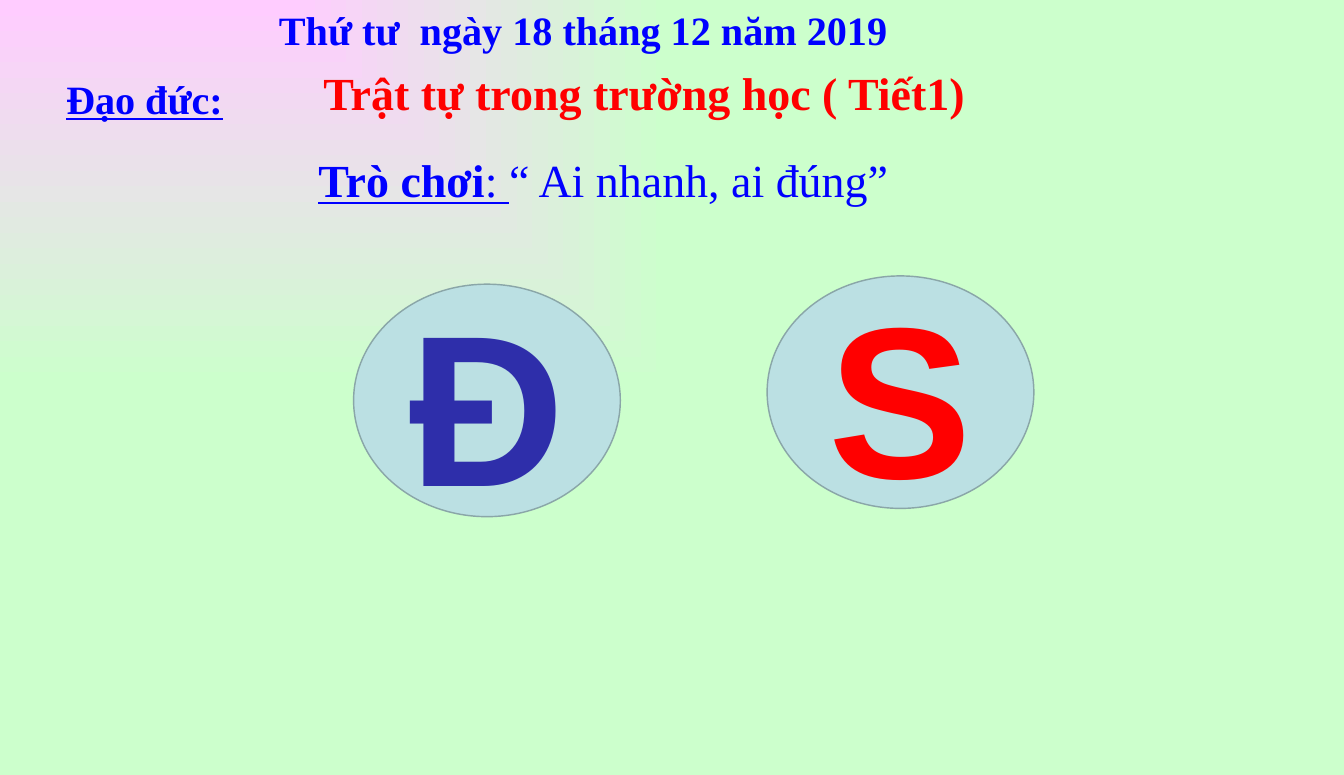
"""Build the "Trật tự trong trường học" true-or-false game slide."""
from dataclasses import dataclass

from lxml.etree import SubElement
from pptx import Presentation
from pptx.dml.color import RGBColor as RGB
from pptx.enum.shapes import MSO_SHAPE as SHAPE
from pptx.enum.text import MSO_ANCHOR as ANCHOR, MSO_AUTO_SIZE as AUTO, PP_ALIGN as ALIGN
from pptx.oxml.ns import qn
from pptx.slide import Slide
from pptx.text.text import _Run as Run
from pptx.util import Pt


@dataclass(frozen=True)
class Theme:
    serif: str = "Times New Roman"
    sans: str = "Arial"
    small: int = 28
    large: int = 32
    letter: int = 150
    blue: str = "0000FF"
    red: str = "FF0000"
    navy: str = "2E2EAA"
    disc: str = "BBE0E3"
    outline: str = "8AA6A8"
    pink: str = "FFCCFF"
    green: str = "CCFFCC"


@dataclass(frozen=True)
class Span:
    text: str
    bold: bool = True
    underline: bool = False


@dataclass(frozen=True)
class Line:
    left: float
    top: float
    width: float
    height: float
    size: int
    color: str
    spans: tuple[Span, ...]
    wrap: bool = False
    indent: float = 0


@dataclass(frozen=True)
class Disc:
    left: float
    top: float
    letter: str
    color: str


THEME = Theme()
DISC_WIDTH, DISC_HEIGHT = 185.76, 162

LINES = (
    Line(187.2, 0, 442.8, 41.04, THEME.small, THEME.blue,
         (Span("Thứ tư  ngày 18 tháng 12 năm 2019"),)),
    Line(38.88, 48.24, 179.28, 41.04, THEME.small, THEME.blue,
         (Span("Đạo đức:", underline=True),), wrap=True),
    Line(218.16, 41.76, 465.84, 46.08, THEME.large, THEME.red,
         (Span("Trật tự trong trường học ( Tiết1)"),)),
    Line(54.72, 102.24, 803.52, 46.08, THEME.large, THEME.blue,
         (Span("Trò chơi", underline=True),
          Span(": ", bold=False, underline=True),
          Span("“ Ai nhanh, ai đúng”", bold=False)), wrap=True, indent=160),
)

DISCS = (
    Disc(246.24, 198, "Đ", THEME.navy),
    Disc(534.24, 192.24, "S", THEME.red),
)


def style_run(r: Run, font: str, size: int, color: str, bold: bool, underline: bool) -> None:
    """Apply font settings to a run."""
    r.font.name = font
    r.font.size = Pt(size)
    r.font.color.rgb = RGB.from_string(color)
    r.font.bold = bold
    r.font.underline = underline


def paint_background(s: Slide) -> None:
    """Fill the background with a gradient spreading from the top left corner."""
    fill = s.background.fill
    fill.gradient()
    for stop, color in zip(fill.gradient_stops, (THEME.pink, THEME.green)):
        stop.color.rgb = RGB.from_string(color)
    grad = s.element.find(".//" + qn("a:gradFill"))
    grad.remove(grad.find(qn("a:lin")))
    spread = SubElement(grad, qn("a:path"), {"path": "rect"})
    SubElement(spread, qn("a:fillToRect"), {"r": "100000", "b": "100000"})


def add_line(s: Slide, line: Line) -> None:
    """Add one line of heading text."""
    sp = s.shapes.add_textbox(Pt(line.left), Pt(line.top), Pt(line.width), Pt(line.height))
    tf = sp.text_frame
    tf.word_wrap = line.wrap
    tf.auto_size = AUTO.SHAPE_TO_FIT_TEXT
    p = tf.paragraphs[0]
    if line.indent:
        p._p.get_or_add_pPr().set("marL", str(Pt(line.indent)))
    for span in line.spans:
        r = p.add_run()
        r.text = span.text
        style_run(r, THEME.serif, line.size, line.color, span.bold, span.underline)


def add_disc(s: Slide, disc: Disc) -> None:
    """Add an answer disc with its letter."""
    sp = s.shapes.add_shape(SHAPE.OVAL, Pt(disc.left), Pt(disc.top),
                            Pt(DISC_WIDTH), Pt(DISC_HEIGHT))
    sp.shadow.inherit = False
    sp.fill.solid()
    sp.fill.fore_color.rgb = RGB.from_string(THEME.disc)
    sp.line.color.rgb = RGB.from_string(THEME.outline)
    sp.line.width = Pt(1)
    tf = sp.text_frame
    tf.vertical_anchor = ANCHOR.MIDDLE
    tf.text = disc.letter
    p = tf.paragraphs[0]
    p.alignment = ALIGN.CENTER
    style_run(p.runs[0], THEME.sans, THEME.letter, disc.color, True, False)


def main() -> None:
    """Build and save the slide."""
    prs = Presentation()
    prs.slide_width, prs.slide_height = Pt(936), Pt(540)
    s = prs.slides.add_slide(prs.slide_layouts[6])
    paint_background(s)
    for line in LINES:
        add_line(s, line)
    for disc in DISCS:
        add_disc(s, disc)
    prs.save("out.pptx")


if __name__ == "__main__":
    main()
